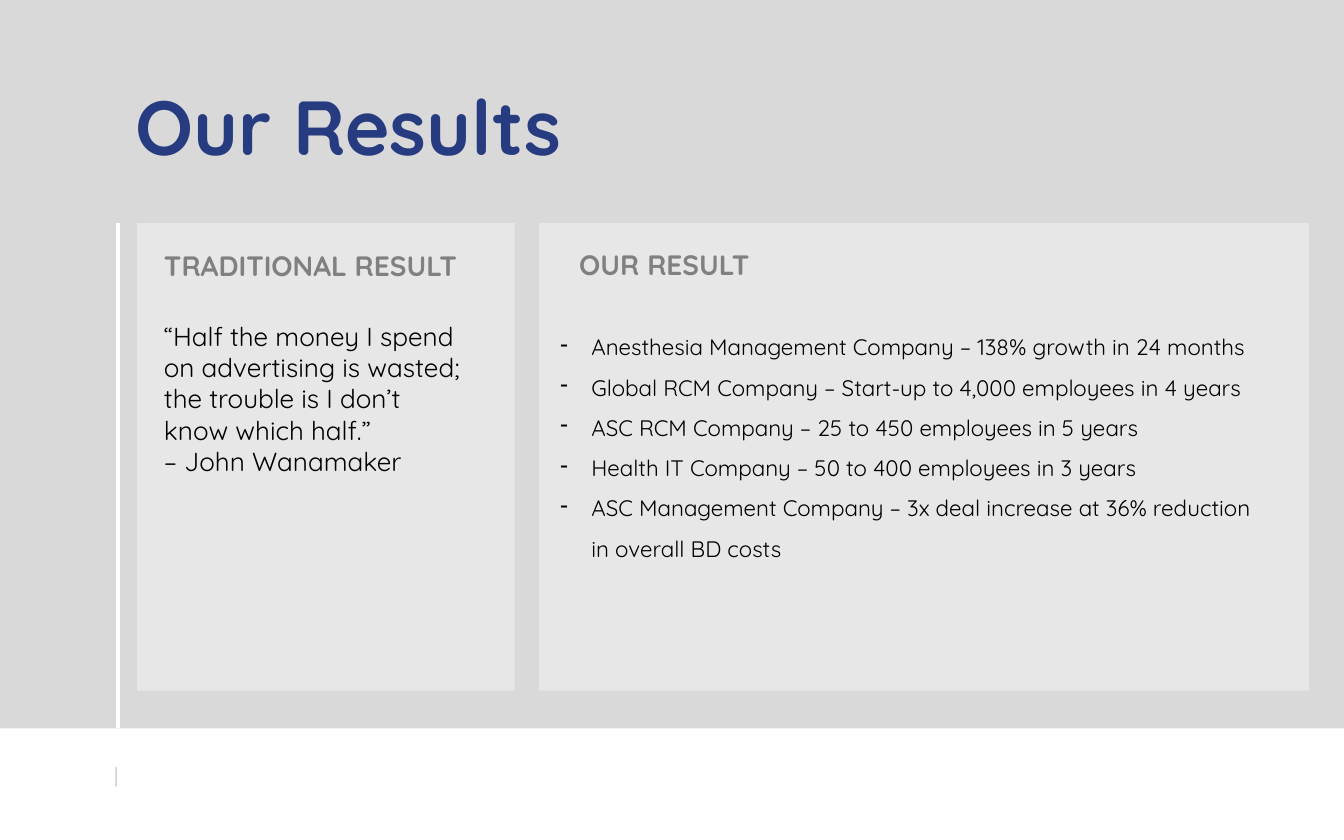
from lxml import etree
from pptx import Presentation
from pptx.dml.color import RGBColor
from pptx.enum.shapes import MSO_CONNECTOR, MSO_SHAPE
from pptx.oxml.ns import qn
from pptx.util import Inches, Pt

FONT = "Quicksand"
WHITE = RGBColor(0xFF, 0xFF, 0xFF)
BLACK = RGBColor(0, 0, 0)
BACKDROP = RGBColor(0xD9, 0xD9, 0xD9)
MARK = RGBColor(0xBF, 0xBF, 0xBF)
HEADING = RGBColor(0x80, 0x80, 0x80)
NAVY = RGBColor(0x26, 0x3B, 0x80)

QUOTE = [
    "“Half the money I spend on advertising is wasted; "
    "the trouble is I don’t know which half.”",
    "– John Wanamaker",
]
RESULTS = [
    "Anesthesia Management Company – 138% growth in 24 months",
    "Global RCM Company – Start-up to 4,000 employees in 4 years",
    "ASC RCM Company – 25 to 450 employees in 5 years",
    "Health IT Company – 50 to 400 employees in 3 years",
    "ASC Management Company – 3x deal increase at 36% reduction\vin overall BD costs",
]


def add_rect(slide, left, top, width, height, color, opacity=100):
    rect = slide.shapes.add_shape(MSO_SHAPE.RECTANGLE, Inches(left), Inches(top),
                                  Inches(width), Inches(height))
    rect.shadow.inherit = False
    rect.line.fill.background()
    rect.fill.solid()
    rect.fill.fore_color.rgb = color
    if opacity < 100:
        srgb = rect.fill._xPr.find(qn("a:solidFill"))[0]
        etree.SubElement(srgb, qn("a:alpha"), val=str(opacity * 1000))


def add_text(slide, left, top, width, height, lines, size, color,
             bold=False, wrap=True, inset=0.08, dashed=False):
    box = slide.shapes.add_textbox(Inches(left), Inches(top), Inches(width), Inches(height))
    frame = box.text_frame
    frame.word_wrap = wrap
    frame.margin_left, frame.margin_right = Inches(inset), Inches(0.08)
    frame.margin_top = frame.margin_bottom = Inches(0.04)
    for index, line in enumerate(lines):
        paragraph = frame.paragraphs[0] if index == 0 else frame.add_paragraph()
        paragraph.text = line
        if dashed:
            paragraph.line_spacing = 1.5
            props = paragraph._p.get_or_add_pPr()
            props.set("marL", str(Inches(0.23)))
            props.set("indent", str(-Inches(0.23)))
            etree.SubElement(props, qn("a:buChar"), char="-")
        for run in paragraph.runs:
            run.font.name = FONT
            run.font.size = Pt(size)
            run.font.bold = bold
            run.font.color.rgb = color


def add_frame(slide, width, height):
    """Gray backdrop, white side rule and footer mark."""
    add_rect(slide, 0, 0, width, height, BACKDROP)
    add_text(slide, 0.77, height + 0.22, 0.26, 0.26, ["|"], 11, MARK, wrap=False)
    rule = slide.shapes.add_connector(MSO_CONNECTOR.STRAIGHT, Inches(0.88), Inches(height),
                                      Inches(0.88), Inches(1.66))
    rule.line.color.rgb = WHITE
    rule.line.width = Pt(2)
    etree.SubElement(rule._element.spPr, qn("a:effectLst"))


def add_traditional(slide, left, top, width, height):
    add_rect(slide, left, top, width, height, WHITE, 38)
    add_text(slide, left + 0.12, top + 0.15, width - 0.12, 0.33,
             ["TRADITIONAL RESULT"], 15, HEADING, bold=True)
    add_text(slide, left + 0.12, top + 0.68, 2.37, 1.49, QUOTE, 14, BLACK)


def add_ours(slide, left, top, width, height):
    add_rect(slide, left, top, width, height, WHITE, 38)
    add_text(slide, left + 0.22, top + 0.14, 1.75, 0.33,
             ["OUR RESULT"], 15, HEADING, bold=True)
    add_text(slide, left + 0.08, top + 0.68, width - 0.08, 2.0,
             RESULTS, 12, BLACK, dashed=True)


def main():
    prs = Presentation()
    prs.slide_width, prs.slide_height = Inches(10), Inches(6.25)
    slide = prs.slides.add_slide(prs.slide_layouts[6])

    add_frame(slide, 10, 5.42)
    # Title
    add_text(slide, 1.01, 0.55, 7.99, 0.8, ["Our Results"], 41, NAVY, bold=True, inset=0)
    # Result panels
    add_ours(slide, 4.01, 1.66, 5.73, 3.48)
    add_traditional(slide, 1.02, 1.66, 2.81, 3.48)

    prs.save("out.pptx")


if __name__ == "__main__":
    main()
